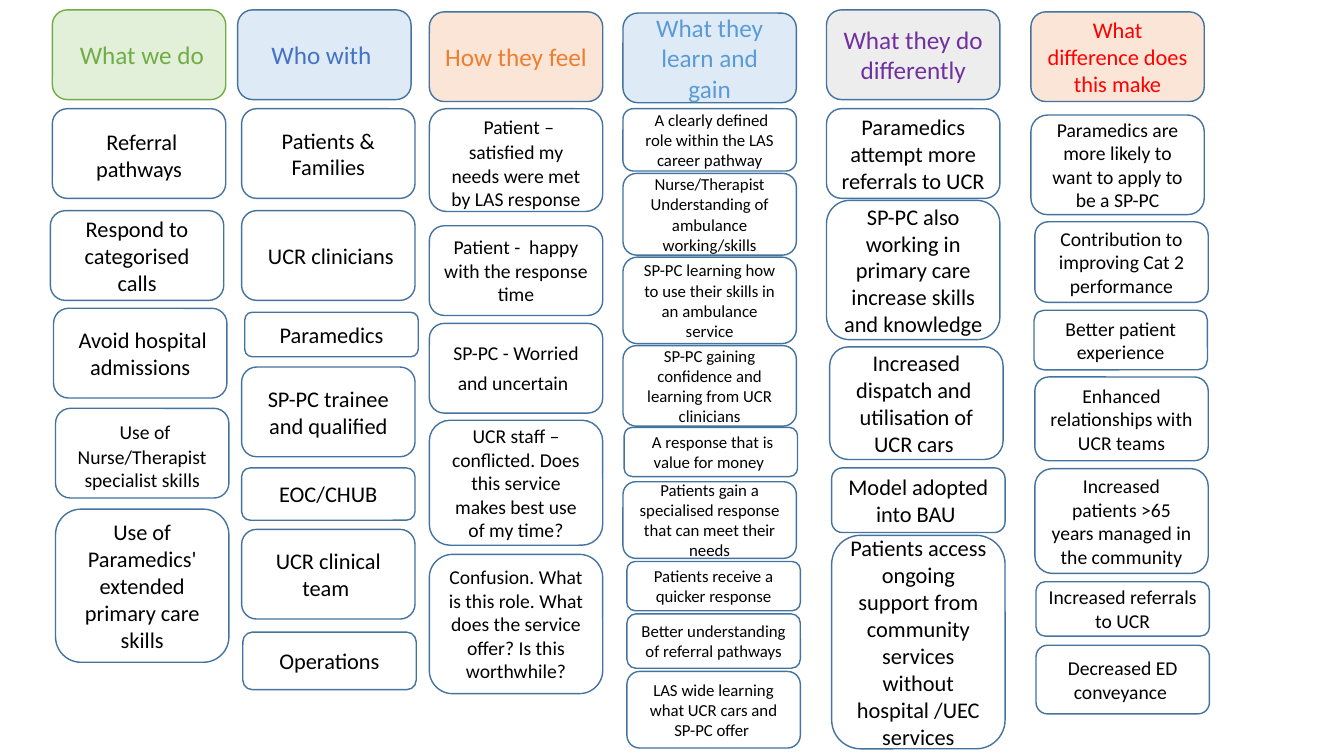
from pptx import Presentation
from pptx.dml.color import RGBColor
from pptx.enum.shapes import MSO_SHAPE
from pptx.enum.text import MSO_ANCHOR, PP_ALIGN
from pptx.util import Cm, Pt

ROUND_RECT = MSO_SHAPE.ROUNDED_RECTANGLE
MIDDLE = MSO_ANCHOR.MIDDLE
CENTER = PP_ALIGN.CENTER

FONT = "Calibri"
BLACK = RGBColor(0x00, 0x00, 0x00)
WHITE = RGBColor(0xFF, 0xFF, 0xFF)
STEEL = RGBColor(0x43, 0x73, 0x9E)
GREEN = RGBColor(0x70, 0xAD, 0x47)
PALE_GREEN = RGBColor(0xE2, 0xF0, 0xD9)
BLUE = RGBColor(0x44, 0x72, 0xC4)
SKY = RGBColor(0x5B, 0x9B, 0xD5)
PALE_BLUE = RGBColor(0xDE, 0xEB, 0xF7)
ORANGE = RGBColor(0xED, 0x7D, 0x31)
PALE_ORANGE = RGBColor(0xFB, 0xE5, 0xD6)
PURPLE = RGBColor(0x70, 0x30, 0xA0)
PALE_GREY = RGBColor(0xED, 0xED, 0xED)
RED = RGBColor(0xFF, 0x00, 0x00)

CARD_W = 4.37
CARD_H = 2.26
HARD_SPACE = (" ", 18)

COLUMNS = [
    dict(left=1.32, top=0.25, size=16, fill=PALE_GREEN, color=GREEN, line=GREEN,
         title=[HARD_SPACE, ("What we do", 18)], cards=[
             (0, 2.74, CARD_H, [HARD_SPACE, ("Referral pathways", 16)]),
             (-0.05, 5.31, CARD_H, "Respond to categorised calls"),
             (0.03, 7.77, CARD_H, " Avoid hospital admissions"),
             (0.08, 10.29, CARD_H,
              [HARD_SPACE, ("Use of Nurse/Therapist specialist skills", 14)]),
             (0.08, 12.83, 3.86, "Use of Paramedics' extended primary care skills"),
         ]),
    dict(left=5.99, top=0.25, size=16, fill=PALE_BLUE, color=BLUE,
         title=[("Who with ", 18)], cards=[
             (0.1, 2.74, CARD_H, "Patients & Families"),
             (0.1, 5.31, CARD_H, " UCR clinicians"),
             (0.18, 7.87, 1.12, "Paramedics"),
             (0.1, 9.25, CARD_H, "SP-PC trainee and qualified"),
             (0.1, 11.79, 1.32, "EOC/CHUB"),
             (0.1, 13.34, CARD_H, "UCR clinical team "),
             (0.13, 15.93, 1.45, "Operations"),
         ]),
    dict(left=10.82, top=0.3, size=14, fill=PALE_ORANGE, color=ORANGE,
         title=[("How they feel ", 18)], cards=[
             (0, 2.74, 2.59, [HARD_SPACE, (
                 "Patient – satisfied my needs were met by LAS response", 14)]),
             (0, 5.69, CARD_H, "Patient -  happy with the response time"),
             (0, 8.15, CARD_H, [("SP-PC - Worried and uncertain", 14), HARD_SPACE]),
             (0, 10.59, 3.15, "UCR staff – conflicted. Does this service makes "
                              "best use of my time?"),
             (0, 13.97, 3.51, "Confusion. What is this role. What does the "
                              "service offer? Is this worthwhile?"),
         ]),
    dict(left=15.7, top=0.33, size=12, fill=PALE_BLUE, color=SKY,
         title=[("What they learn and gain", 18)], cards=[
             (0, 2.74, 1.57, " A clearly defined role within the LAS career pathway"),
             (0, 4.37, 2.06, "Nurse/Therapist Understanding of ambulance working/skills"),
             (0, 6.48, 2.18, "SP-PC learning how to use their skills in an "
                             "ambulance service"),
             (0, 8.71, 2.03, "SP-PC gaining confidence and learning from UCR clinicians"),
             (0.03, 10.77, 1.24, " A response that is value for money "),
             (0, 12.14, 1.93, "Patients gain a specialised response that can "
                              "meet their needs"),
             (0.1, 14.15, 1.24, "Patients receive a quicker response"),
             (0.1, 15.47, 1.37, "Better understanding of referral pathways"),
             (0.1, 16.92, 1.93, "LAS wide learning what UCR cars and SP-PC offer "),
         ]),
    dict(left=20.83, top=0.25, size=16, fill=PALE_GREY, color=PURPLE,
         title=[("What they do differently", 18)], cards=[
             (0, 2.74, CARD_H, "Paramedics attempt more referrals to UCR"),
             (0, 5.05, 3.51, "SP-PC also working in primary care increase "
                             "skills and knowledge"),
             (0.08, 8.74, 2.84, "Increased dispatch and  utilisation of UCR cars "),
             (0.13, 11.79, 1.63, "Model adopted into BAU "),
             (0.13, 13.49, 5.38, "Patients access ongoing support from community "
                                 "services without hospital /UEC services"),
         ]),
    dict(left=25.98, top=0.3, size=14, fill=PALE_ORANGE, color=RED,
         title=[("What difference does this make", 16)], cards=[
             (0, 2.9, 2.51, "Paramedics are more likely to want to apply to be a SP-PC"),
             (0.1, 5.59, 2.03, "Contribution to improving Cat 2 performance"),
             (0.08, 7.82, 1.5, "Better patient experience"),
             (0.1, 9.5, 2.11, "Enhanced relationships with UCR teams"),
             (0.1, 11.81, 2.64, "Increased patients >65 years managed in the community"),
             (0.13, 14.66, 1.37, "Increased referrals to UCR"),
             (0.13, 16.26, 1.73, "Decreased ED conveyance "),
         ]),
]


def add_text(p, text, size, color=BLACK):
    r = p.add_run()
    r.text = text
    r.font.name = FONT
    r.font.size = Pt(size)
    r.font.color.rgb = color


def add_card(slide, left, top, height, runs, fill=WHITE, line=STEEL, color=BLACK):
    sp = slide.shapes.add_shape(ROUND_RECT, Cm(left), Cm(top), Cm(CARD_W), Cm(height))
    sp.shadow.inherit = False
    sp.fill.solid()
    sp.fill.fore_color.rgb = fill
    sp.line.color.rgb = line
    sp.line.width = Pt(1)
    tf = sp.text_frame
    tf.word_wrap = True
    tf.vertical_anchor = MIDDLE
    p = tf.paragraphs[0]
    p.alignment = CENTER
    for text, size in runs:
        add_text(p, text, size, color=color)


def add_column(slide, left, top, size, fill, color, title, cards, line=STEEL):
    add_card(slide, left, top, CARD_H, title, fill=fill, line=line, color=color)
    for shift, card_top, height, content in cards:
        runs = [(content, size)] if isinstance(content, str) else content
        add_card(slide, left + shift, card_top, height, runs)


def main():
    prs = Presentation()
    prs.slide_width = Cm(33.87)
    prs.slide_height = Cm(19.05)
    slide = prs.slides.add_slide(prs.slide_layouts[6])
    for column in COLUMNS:
        add_column(slide, **column)
    prs.save("out.pptx")


if __name__ == "__main__":
    main()
